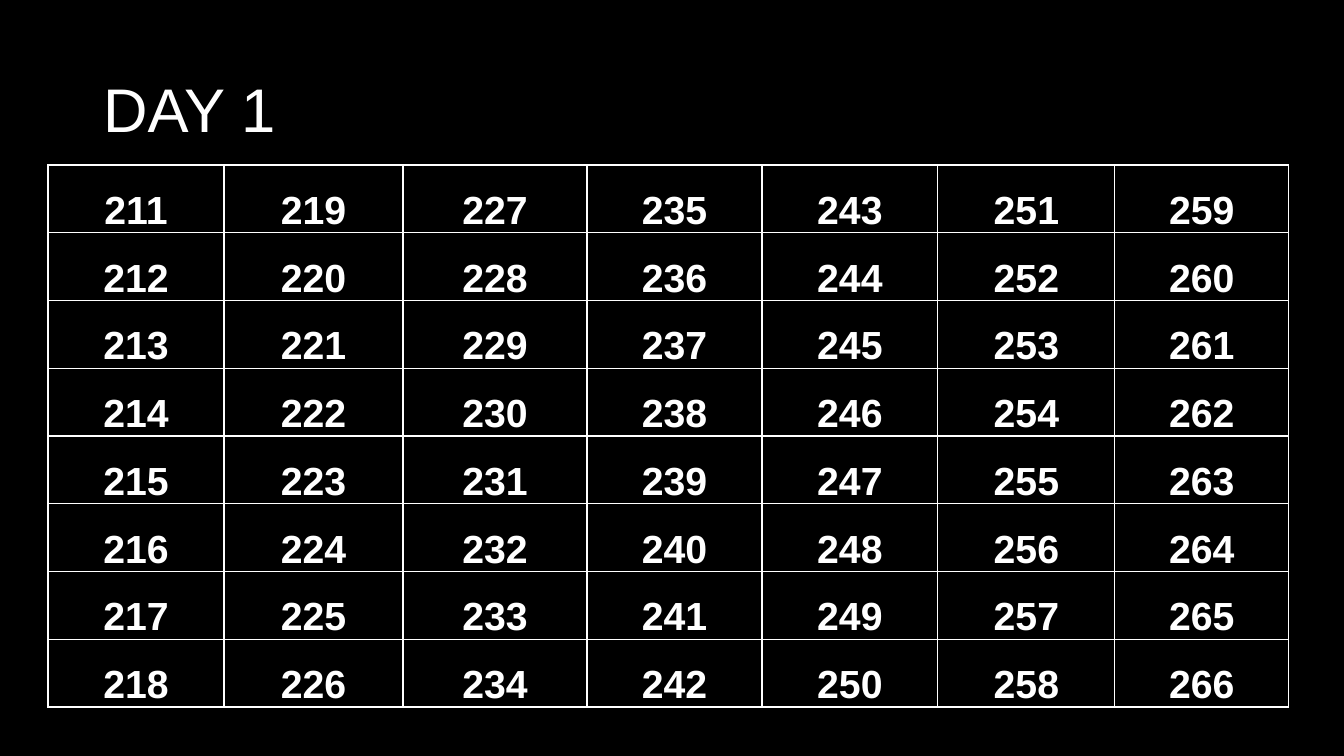
from dataclasses import dataclass

from lxml.etree import SubElement
from pptx import Presentation
from pptx.dml.color import RGBColor
from pptx.enum.text import MSO_ANCHOR as Anchor, PP_ALIGN as Align
from pptx.oxml.ns import qn
from pptx.util import Pt

EMU_PER_PX = 914400 / 100.8
TITLE_ONLY = 5


@dataclass(frozen=True)
class Theme:
    background: RGBColor = RGBColor(0, 0, 0)
    ink: RGBColor = RGBColor(255, 255, 255)
    font: str = "Arial"
    title_size: int = 44
    number_size: int = 28
    border_width: int = 1


def px(length):
    return round(length * EMU_PER_PX)


def assign(target, values):
    for name, value in values.items():
        setattr(target, name, value)


class PageBuilder:
    def __init__(self, deck, theme):
        self.theme = theme
        self.page = deck.slides.add_slide(deck.slide_layouts[TITLE_ONLY])
        self.paint(self.page.background)

    def paint(self, target):
        target.fill.solid()
        target.fill.fore_color.rgb = self.theme.background

    def set_text(self, frame, text, size, bold, paragraph_format):
        para = frame.paragraphs[0]
        assign(para, paragraph_format)
        span = para.add_run()
        span.text = text
        assign(span.font, {"name": self.theme.font, "size": Pt(size), "bold": bold})
        span.font.color.rgb = self.theme.ink

    def title(self, text, left, top, width, height):
        box = self.page.shapes.title
        assign(box, {"left": px(left), "top": px(top),
                     "width": px(width), "height": px(height)})
        box.text_frame.vertical_anchor = Anchor.MIDDLE
        self.set_text(box.text_frame, text, self.theme.title_size, False,
                      {"alignment": Align.LEFT, "line_spacing": 0.9})

    def border(self, cell):
        properties = cell._tc.get_or_add_tcPr()
        for side in ("a:lnL", "a:lnR", "a:lnT", "a:lnB"):
            line = SubElement(properties, qn(side), w=str(Pt(self.theme.border_width)))
            solid = SubElement(line, qn("a:solidFill"))
            SubElement(solid, qn("a:srgbClr"), val=str(self.theme.ink))

    def number_table(self, first, row_count, left, top, widths, height):
        """Add a grid whose consecutive numbers run down each column in turn."""
        table = self.page.shapes.add_table(
            row_count, len(widths), px(left), px(top), px(sum(widths)), px(height)).table
        assign(table, {"first_row": False, "horz_banding": False})
        for row in table.rows:
            row.height = px(height / row_count)
        for column_index, width in enumerate(widths):
            table.columns[column_index].width = px(width)
            for row_index in range(row_count):
                number = first + column_index * row_count + row_index
                self.number_cell(table.cell(row_index, column_index), number)

    def number_cell(self, cell, number):
        self.border(cell)
        self.paint(cell)
        assign(cell, {"margin_left": px(1), "margin_right": px(1), "margin_top": px(1),
                      "margin_bottom": 0, "vertical_anchor": Anchor.BOTTOM})
        self.set_text(cell.text_frame, str(number), self.theme.number_size, True,
                      {"alignment": Align.CENTER, "line_spacing": 1.19,
                       "space_after": Pt(14)})


def main():
    deck = Presentation()
    assign(deck, {"slide_width": px(1344), "slide_height": px(756)})
    builder = PageBuilder(deck, Theme())
    builder.title("DAY 1", 93, 40, 1159, 146)
    builder.number_table(first=211, row_count=8, left=48, top=165,
                         widths=(176, 179, 184, 175, 176, 177, 174), height=542)
    deck.save("out.pptx")


if __name__ == "__main__":
    main()
